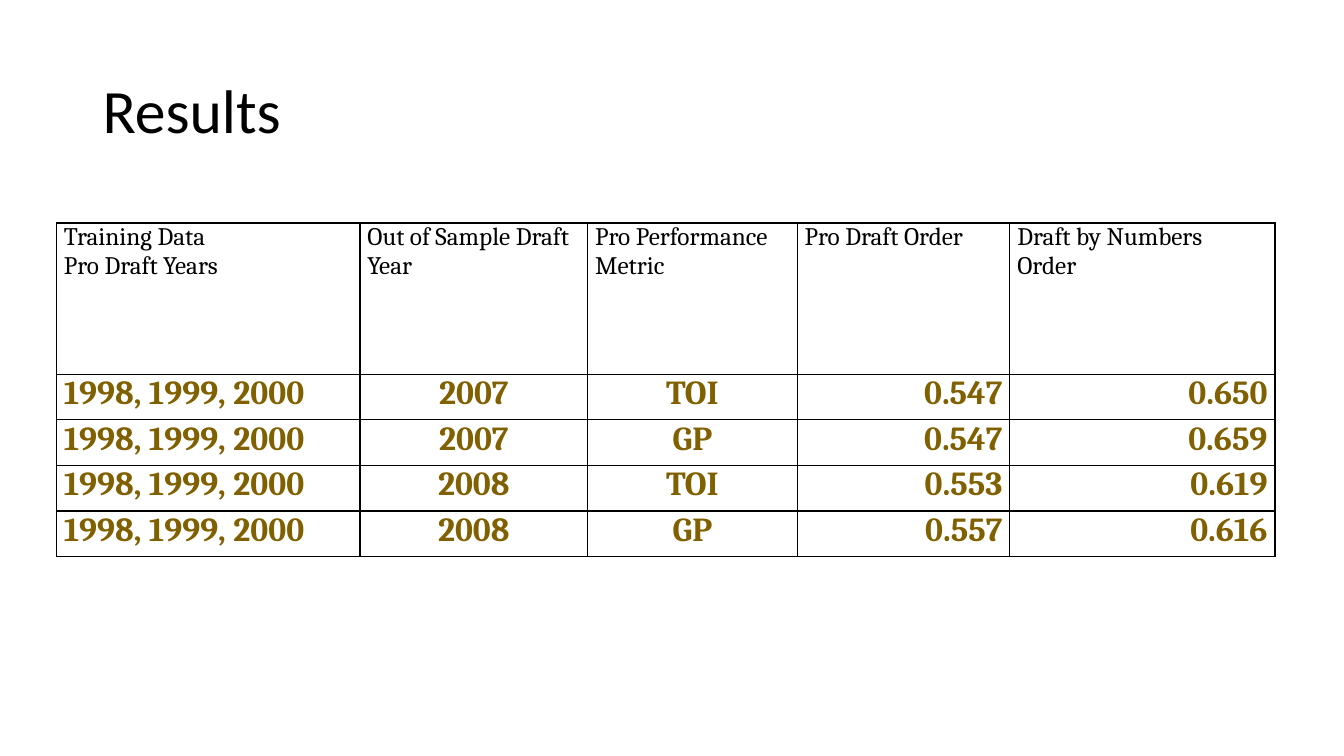
import pptx
import pptx.dml.color
import pptx.enum.text
import pptx.oxml
import pptx.oxml.ns
import pptx.util

Cm = pptx.util.Cm
Pt = pptx.util.Pt
RGBColor = pptx.dml.color.RGBColor
ALIGN = pptx.enum.text.PP_ALIGN
ANCHOR = pptx.enum.text.MSO_ANCHOR

BLACK = RGBColor(0x00, 0x00, 0x00)
GOLD = RGBColor(0x80, 0x60, 0x00)

COL_WIDTHS = [7.65, 5.74, 5.28, 5.36, 6.68]
HEADER_HEIGHT = 3.81
ROW_HEIGHT = 1.15
COL_ALIGNS = [ALIGN.LEFT, ALIGN.CENTER, ALIGN.CENTER, ALIGN.RIGHT, ALIGN.RIGHT]

TRAINING_YEARS = "1998, 1999, 2000"
HEADERS = [
    "Training Data\nPro Draft Years",
    "Out of Sample Draft Year",
    "Pro Performance Metric",
    "Pro Draft Order",
    "Draft by Numbers\nOrder",
]
RESULTS = [
    (TRAINING_YEARS, "2007", "TOI", "0.547", "0.650"),
    (TRAINING_YEARS, "2007", "GP", "0.547", "0.659"),
    (TRAINING_YEARS, "2008", "TOI", "0.553", "0.619"),
    (TRAINING_YEARS, "2008", "GP", "0.557", "0.616"),
]


def write_text(tf, text, size, font="Cambria", color=BLACK, bold=False,
               align=ALIGN.LEFT, line_spacing=None):
    """Write each line of text as one formatted paragraph."""
    for i, line in enumerate(text.split("\n")):
        p = tf.paragraphs[0] if i == 0 else tf.add_paragraph()
        p.alignment = align
        p.line_spacing = line_spacing
        r = p.add_run()
        r.text = line
        r.font.name = font
        r.font.size = Pt(size)
        r.font.bold = bold
        r.font.color.rgb = color


def set_borders(cell, color=BLACK, width=1):
    """Draw a line on all four sides; lines come before the fill in tcPr."""
    tc_pr = cell._tc.get_or_add_tcPr()
    ns = pptx.oxml.ns.nsdecls("a")
    for i, side in enumerate(("lnL", "lnR", "lnT", "lnB")):
        line = pptx.oxml.parse_xml(
            f'<a:{side} {ns} w="{Pt(width)}"><a:solidFill>'
            f'<a:srgbClr val="{color}"/></a:solidFill></a:{side}>')
        tc_pr.insert(i, line)


def format_cell(cell):
    cell.margin_left = cell.margin_right = Cm(0.19)
    cell.margin_top = cell.margin_bottom = Cm(0)
    cell.vertical_anchor = ANCHOR.TOP
    cell.fill.background()
    set_borders(cell)


def add_title(s, text):
    title = s.shapes.title
    title.left, title.top = Cm(2.33), Cm(1.01)
    title.width, title.height = Cm(29.21), Cm(3.68)
    tf = title.text_frame
    tf.auto_size = pptx.enum.text.MSO_AUTO_SIZE.NONE
    tf.vertical_anchor = ANCHOR.MIDDLE
    write_text(tf, text, 44, font="Calibri", line_spacing=0.9)


def add_results_table(s):
    heights = [HEADER_HEIGHT] + [ROW_HEIGHT] * len(RESULTS)
    table = s.shapes.add_table(
        len(heights), len(COL_WIDTHS), Cm(1.42), Cm(5.62),
        Cm(sum(COL_WIDTHS)), Cm(sum(heights))).table
    table.first_row = False
    table.horz_banding = False
    for column, width in zip(table.columns, COL_WIDTHS):
        column.width = Cm(width)
    for row, height in zip(table.rows, heights):
        row.height = Cm(height)

    # Header row
    for col, text in enumerate(HEADERS):
        cell = table.cell(0, col)
        format_cell(cell)
        write_text(cell.text_frame, text, 18)

    # Result rows
    for row, values in enumerate(RESULTS, start=1):
        for col, (text, align) in enumerate(zip(values, COL_ALIGNS)):
            cell = table.cell(row, col)
            format_cell(cell)
            write_text(cell.text_frame, text, 24, color=GOLD, bold=True,
                       align=align)


def main():
    prs = pptx.Presentation()
    prs.slide_width, prs.slide_height = Cm(33.87), Cm(19.05)
    s = prs.slides.add_slide(prs.slide_layouts[5])
    add_title(s, "Results")
    add_results_table(s)
    prs.save("out.pptx")


if __name__ == "__main__":
    main()
